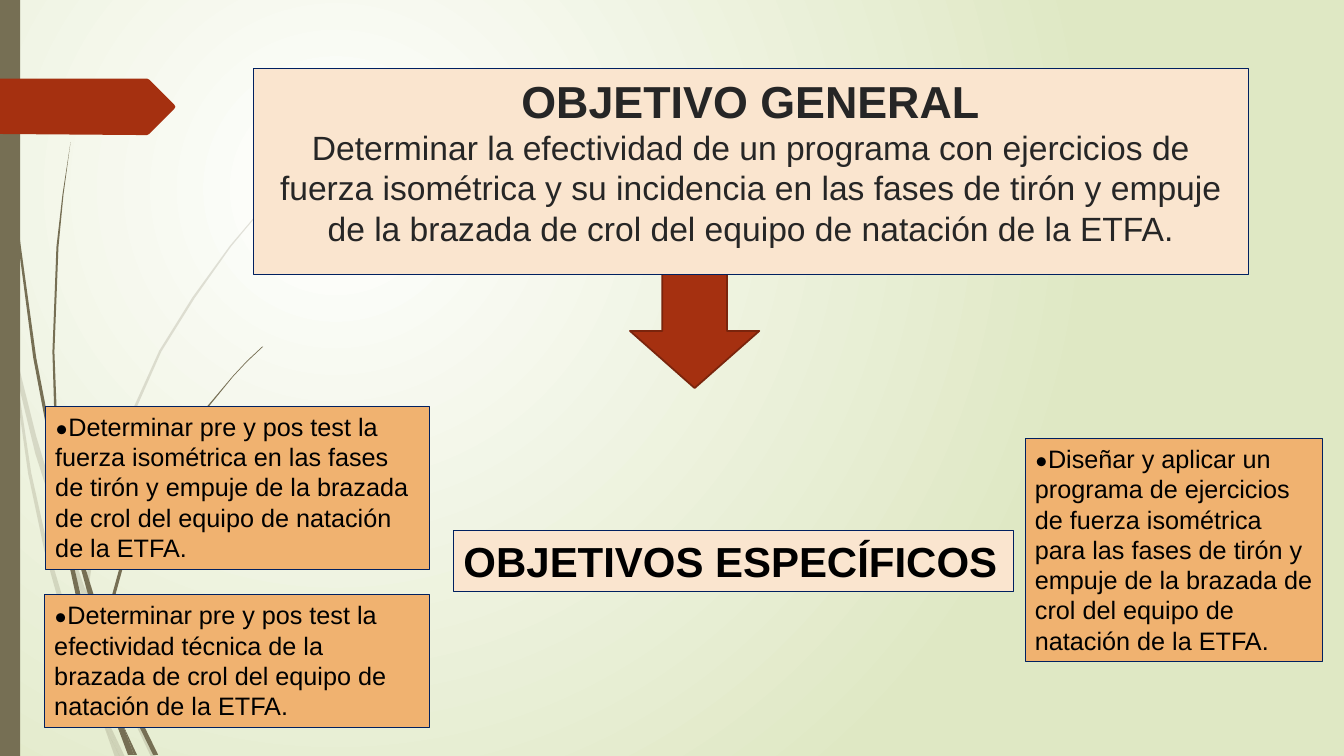
from pptx import Presentation
from pptx.dml.color import RGBColor
from pptx.enum.shapes import MSO_SHAPE as Preset
from pptx.enum.text import MSO_ANCHOR as Anchor, MSO_AUTO_SIZE as AutoSize, PP_ALIGN as Align
from pptx.oxml import parse_xml
from pptx.oxml.ns import nsdecls, qn
from pptx.util import Pt

OLIVE, RUST, NAVY, CREAM, ORANGE = "766F54", "A53010", "002060", "FAE5CF", "F0B270"


def color(hex_string):
    return RGBColor.from_string(hex_string)


def paint(shape, fill, line=None, width=0.75):
    shape.shadow.inherit = False
    shape.fill.solid()
    shape.fill.fore_color.rgb = color(fill)
    if line:
        shape.line.color.rgb = color(line)
        shape.line.width = Pt(width)
    else:
        shape.line.fill.background()


presentation = Presentation()
presentation.slide_width, presentation.slide_height = Pt(960), Pt(540)
slide = presentation.slides.add_slide(presentation.slide_layouts[6])
shapes = slide.shapes

# Background: radial gradient centred in the upper left
background = slide.background.fill
background.gradient()
for stop, shade in zip(background.gradient_stops, ("FFFFFF", "DFE8C4")):
    stop.color.rgb = color(shade)
gradient = slide.element.find(".//" + qn("a:gradFill"))
gradient.replace(gradient.find(qn("a:lin")), parse_xml(
    f'<a:path {nsdecls("a")} path="circle">'
    '<a:fillToRect l="50000" t="50000" r="100000" b="100000"/></a:path>'))

# Grass blades: outlines in hundredths of an inch (0.72 pt)
pale_blades = [
    [(11, 350), (9, 322), (0, 282), (0, 299), (10, 344)],
    [(58, 522), (84, 599), (85, 586), (62, 520), (36, 433), (14, 345), (17, 376), (35, 450)],
    [(92, 607), (88, 596), (88, 610), (123, 694), (150, 751), (155, 751), (127, 692)],
    [(119, 751), (124, 751), (105, 711)],
    [(93, 683), (70, 619), (48, 545), (31, 469), (17, 376), (11, 350), (28, 470), (44, 546),
     (65, 621), (92, 693), (101, 714), (99, 707)],
    [(88, 584), (96, 522), (110, 462), (160, 349), (193, 296), (229, 245), (268, 198),
     (290, 175), (312, 154), (312, 153), (289, 175), (268, 197), (228, 244), (191, 295),
     (158, 348), (107, 461), (91, 522), (85, 584), (85, 586), (88, 596)],
    [(101, 714), (114, 751), (119, 751)],
    [(88, 608), (88, 596), (85, 586), (84, 599)],
    [(96, 692), (93, 683), (99, 707), (101, 714), (119, 751), (105, 711)],
]
dark_blades = [
    [(7, 110), (17, 233), (33, 355), (56, 477), (57, 481), (55, 457), (55, 453), (36, 355),
     (19, 232), (8, 109), (5, 48), (4, 0), (3, 0), (4, 48)],
    [(88, 592), (106, 645), (106, 631), (93, 590), (75, 532), (60, 472), (64, 505)],
    [(113, 649), (110, 641), (111, 656), (132, 708), (152, 749), (157, 749), (136, 706)],
    [(110, 691), (98, 657), (84, 607), (72, 556), (64, 505), (57, 477), (68, 557), (79, 608),
     (93, 659), (111, 708), (117, 722), (116, 717)],
    [(60, 472), (58, 453), (54, 349), (58, 245), (63, 193), (70, 141), (62, 193), (56, 245),
     (52, 349), (55, 449)],
    [(133, 749), (136, 749), (122, 719)],
    [(111, 633), (114, 592), (125, 552), (158, 476), (180, 440), (205, 406), (231, 374),
     (245, 359), (261, 344), (260, 344), (245, 358), (231, 373), (204, 405), (179, 439),
     (156, 474), (137, 512), (122, 551), (111, 591), (106, 631), (110, 641)],
    [(117, 722), (127, 749), (131, 749)],
    [(116, 706), (110, 691), (116, 717), (117, 722), (130, 749), (133, 749), (122, 719)],
]
pointer = [(173, 108), (148, 133), (146, 134), (136, 134), (0, 133), (0, 78), (146, 78),
           (148, 79), (173, 104), (174, 106)]


def add_outline(points, fill):
    builder = shapes.build_freeform(*points[0], scale=Pt(0.72))
    builder.add_line_segments(points[1:])
    outline = builder.convert_to_shape()
    paint(outline, fill)
    return outline


for points in pale_blades:
    blade = add_outline(points, OLIVE)
    blade_color = blade.element.spPr.find(".//" + qn("a:srgbClr"))
    blade_color.append(parse_xml(f'<a:alpha {nsdecls("a")} val="20000"/>'))
for points in dark_blades:
    add_outline(points, OLIVE)

# Left band and pointer
band = shapes.add_shape(Preset.RECTANGLE, Pt(0), Pt(0), Pt(14.4), Pt(540))
paint(band, OLIVE)
add_outline(pointer, RUST)

# Arrow from the general objective to the specific ones
arrow = shapes.add_shape(Preset.DOWN_ARROW, Pt(450), Pt(195.6), Pt(92.4), Pt(81.6))
paint(arrow, RUST, "7A240C", 1.25)

# Text boxes: position, fill, alignment, wrapping, runs (text, size, font, colour, bold)
general = ("Determinar la efectividad de un programa con ejercicios de fuerza isométrica y su "
           "incidencia en las fases de tirón y empuje de la brazada de crol del equipo de "
           "natación de la ETFA.")
boxes = [
    ((180.8, 48.8, 710.8, 147), CREAM, Align.CENTER, True,
     [("OBJETIVO GENERAL\v", 32, "Arial", "262626", True),
      (general, 24, "Arial", "262626", False)]),
    ((324, 378.8, 400.2, 43.7), CREAM, Align.LEFT, False,
     [("OBJETIVOS ESPECÍFICOS", 30, "Arial", "000000", True)]),
]
objectives = [
    ((32.4, 290.2, 274.5, 116.4),
     "Determinar pre y pos test la fuerza isométrica en las fases de tirón y empuje de la "
     "brazada de crol del equipo de natación de la ETFA."),
    ((31.7, 424.8, 275.2, 94.6),
     "Determinar pre y pos test la efectividad técnica de la brazada de crol del equipo de "
     "natación de la ETFA."),
    ((732.2, 313.2, 212.4, 159.1),
     "Diseñar y aplicar un programa de ejercicios de fuerza isométrica para las fases de tirón "
     "y empuje de la brazada de crol del equipo de natación de la ETFA."),
]
for place, text in objectives:
    boxes.append((place, ORANGE, Align.LEFT, True,
                  [("•", 18, "TeX Gyre Adventor", "000000", False),
                   (text, 18, "Arial", "000000", False)]))

for place, fill, alignment, wrap, pieces in boxes:
    box = shapes.add_shape(Preset.RECTANGLE, *map(Pt, place))
    paint(box, fill, NAVY)
    text_frame = box.text_frame
    text_frame.word_wrap = wrap
    text_frame.auto_size = AutoSize.NONE
    text_frame.vertical_anchor = Anchor.TOP
    paragraph = text_frame.paragraphs[0]
    paragraph.alignment = alignment
    for text, size, font, shade, bold in pieces:
        run = paragraph.add_run()
        run.text = text.rstrip("\v")
        run.font.size, run.font.name, run.font.bold = Pt(size), font, bold
        run.font.color.rgb = color(shade)
        if text.endswith("\v"):
            paragraph.add_line_break()

presentation.save("out.pptx")
